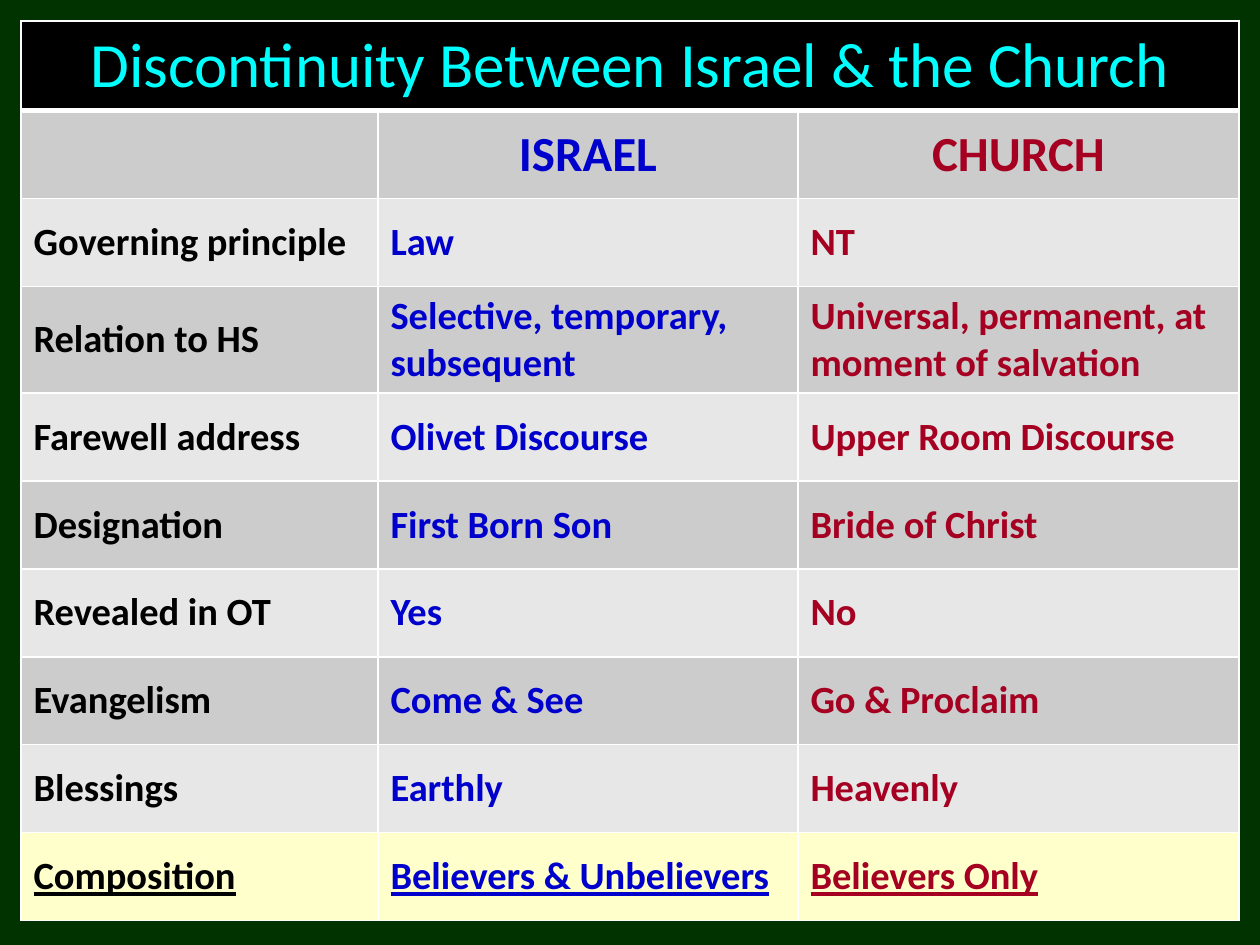
import pptx
import pptx.dml.color
import pptx.enum.text
import pptx.oxml
import pptx.oxml.ns
import pptx.util

EMU_PER_PX = 914400 / 126
COLORS = {
    "background": "003300", "title_fill": "000000", "title": "00FFFF",
    "dark_band": "CCCCCC", "light_band": "E7E7E7", "highlight": "FFFFCC",
    "label": "000000", "israel": "0000CC", "church": "A50021",
    "border": "FFFFFF",
}
TITLE = "Discontinuity Between Israel & the Church"
ROWS = [
    ("", "ISRAEL", "CHURCH"),
    ("Governing principle", "Law", "NT"),
    ("Relation to HS", "Selective, temporary, subsequent",
     "Universal, permanent, at moment of salvation"),
    ("Farewell address", "Olivet Discourse", "Upper Room Discourse"),
    ("Designation", "First Born Son", "Bride of Christ"),
    ("Revealed in OT", "Yes", "No"),
    ("Evangelism", "Come & See", "Go & Proclaim"),
    ("Blessings", "Earthly", "Heavenly"),
    ("Composition", "Believers & Unbelievers", "Believers Only"),
]
COLUMN_COLORS = ("label", "israel", "church")
COLUMN_WIDTHS = (357, 420, 441)
ROW_HEIGHT = 88
TWO_LINE_ROW, TWO_LINE_HEIGHT = 3, 106


def px(length):
    return pptx.util.Emu(round(length * EMU_PER_PX))


def rgb(name):
    return pptx.dml.color.RGBColor.from_string(COLORS[name])


class SlideBuilder:
    font = "Calibri"

    def __init__(self, presentation):
        self.slide = presentation.slides.add_slide(presentation.slide_layouts[6])

    def background(self, color):
        fill = self.slide.background.fill
        fill.solid()
        fill.fore_color.rgb = rgb(color)

    def table(self, left, top, widths, heights):
        frame = self.slide.shapes.add_table(
            len(heights), len(widths), px(left), px(top),
            px(sum(widths)), px(sum(heights)))
        table = frame.table
        table.first_row = table.horz_banding = False
        for column, width in zip(table.columns, widths):
            column.width = px(width)
        for row, height in zip(table.rows, heights):
            row.height = px(height)
        return table

    def cell(self, cell, fill, bottom_width=1):
        cell.fill.solid()
        cell.fill.fore_color.rgb = rgb(fill)
        cell.vertical_anchor = pptx.enum.text.MSO_ANCHOR.MIDDLE
        properties = cell._tc.get_or_add_tcPr()
        for index, side in enumerate("LRTB"):
            width = pptx.util.Pt(bottom_width if side == "B" else 1)
            properties.insert(index, pptx.oxml.parse_xml(
                f'<a:ln{side} {pptx.oxml.ns.nsdecls("a")} w="{width}"><a:solidFill>'
                f'<a:srgbClr val="{COLORS["border"]}"/></a:solidFill></a:ln{side}>'))

    def text(self, cell, text, size, color, bold=True, centered=False, underline=None):
        paragraph = cell.text_frame.paragraphs[0]
        alignment = pptx.enum.text.PP_ALIGN
        paragraph.alignment = alignment.CENTER if centered else alignment.LEFT
        # Space before as a share of the line height
        paragraph._p.get_or_add_pPr().insert(0, pptx.oxml.parse_xml(
            f'<a:spcBef {pptx.oxml.ns.nsdecls("a")}><a:spcPct val="20000"/></a:spcBef>'))
        run = paragraph.add_run()
        run.text = text
        run.font.name = self.font
        run.font.size = pptx.util.Pt(size)
        run.font.bold = bold
        run.font.underline = underline
        run.font.color.rgb = rgb(color)


def main():
    presentation = pptx.Presentation()
    presentation.slide_width, presentation.slide_height = px(1260), px(945)
    builder = SlideBuilder(presentation)
    builder.background("background")

    heights = [ROW_HEIGHT] * (len(ROWS) + 1)
    heights[TWO_LINE_ROW] = TWO_LINE_HEIGHT
    table = builder.table(21, 21, COLUMN_WIDTHS, heights)

    # Title row across all columns
    title_cell = table.cell(0, 0)
    title_cell.merge(table.cell(0, len(COLUMN_WIDTHS) - 1))
    for cell in table.rows[0].cells:
        builder.cell(cell, "title_fill", bottom_width=3)
    builder.text(title_cell, TITLE, 36, "title", bold=False, centered=True)

    # Heading row, banded rows and the highlighted last row
    for row_number, texts in enumerate(ROWS, start=1):
        heading = row_number == 1
        last = row_number == len(ROWS)
        band = "dark_band" if row_number % 2 else "light_band"
        for column, (text, color) in enumerate(zip(texts, COLUMN_COLORS)):
            cell = table.cell(row_number, column)
            builder.cell(cell, "highlight" if last else band)
            if text:
                builder.text(cell, text, 28 if heading else 22, color,
                             centered=heading, underline=last or None)

    presentation.save("out.pptx")


if __name__ == "__main__":
    main()
